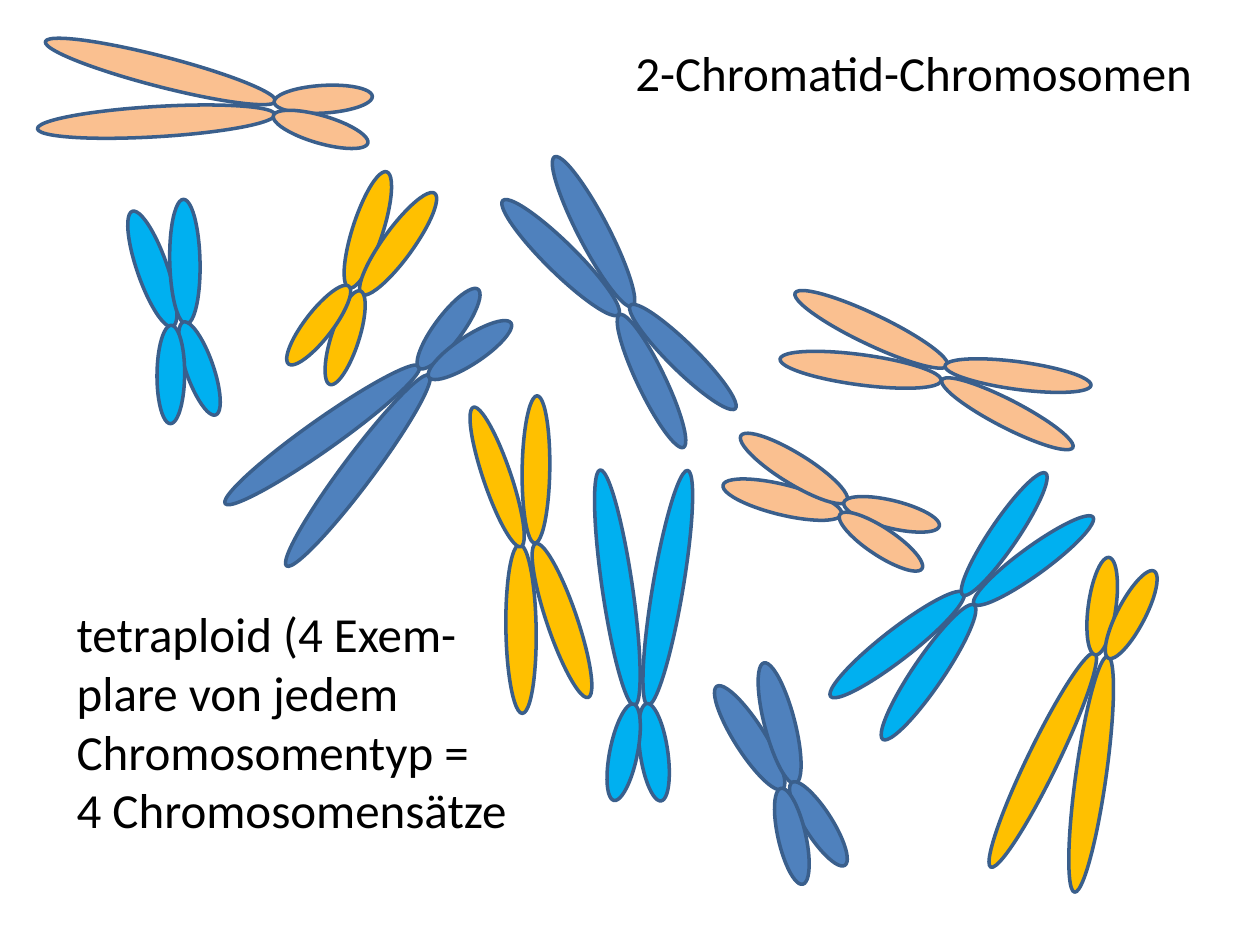
"""Slide with the two-chromatid chromosomes of a tetraploid cell."""
from math import cos, radians, sin

from pptx import Presentation
from pptx.dml.color import RGBColor
from pptx.enum.shapes import MSO_SHAPE
from pptx.enum.text import MSO_AUTO_SIZE, PP_ALIGN
from pptx.util import Pt

BLUE = RGBColor(0x4F, 0x81, 0xBD)
CYAN = RGBColor(0x00, 0xB0, 0xF0)
GOLD = RGBColor(0xFF, 0xC0, 0x00)
PEACH = RGBColor(0xFA, 0xC0, 0x90)
EDGE = RGBColor(0x3A, 0x5F, 0x8C)
BLACK = RGBColor(0, 0, 0)

LONG = [(0, 0, 17.3, 136.1), (28.5, 4.2, 17.3, 136.1),
        (7.1, 96, 15.8, 56.2), (-10, 93.5, 15.8, 56.2)]
MID = [(0, 0, 17.3, 92.9), (23.7, 3, 17.3, 96.5),
       (8.6, 89.6, 15.8, 84.2), (-13.8, 86.5, 15.8, 84.2)]
SHORT = [(0, 0, 17.3, 69.8), (18.9, 2.2, 17.3, 71.3),
         (6.7, 62.6, 15.8, 56.2), (-9.9, 60.4, 15.8, 56.2)]
TURNS = [0, 17.9, 0, 19.7]

CHROMOSOMES = [
    (LONG, BLUE, 204.5, 268.9, 216.8),
    (LONG, CYAN, 352.8, 335.9, 351.7),
    (SHORT, BLUE, 428.4, 421.6, 327.5),
    (SHORT, GOLD, 210.2, 131.4, 18),
    (MID, BLUE, 320.4, 147.2, 314.6),
    (MID, CYAN, 530.6, 384.1, 214.2),
    (SHORT, PEACH, 447.1, 285.5, 283.8),
    (SHORT, CYAN, 87.1, 153.7, 340.8),
    (LONG, PEACH, 89.3, 69.5, 266.6),
    (LONG, GOLD, 623.5, 442.4, 188),
    (MID, GOLD, 321.1, 354.6, 161.2),
    (MID, PEACH, 491.8, 211.3, 277.6),
]

deck = Presentation()
deck.slide_width, deck.slide_height = Pt(720), Pt(540)
slide = deck.slides.add_slide(deck.slide_layouts[6])


def add_text(text, left, top, width, height, size=28, font="Calibri",
             color=BLACK, align=PP_ALIGN.LEFT):
    box = slide.shapes.add_textbox(Pt(left), Pt(top), Pt(width), Pt(height))
    frame = box.text_frame
    frame.word_wrap = True
    frame.auto_size = MSO_AUTO_SIZE.SHAPE_TO_FIT_TEXT
    frame.text = text
    for para in frame.paragraphs:
        para.alignment = align
        para.font.size = Pt(size)
        para.font.name = font
        para.font.color.rgb = color


for arms, color, x, y, angle in CHROMOSOMES:
    group = slide.shapes.add_group_shape()
    c, s = cos(radians(angle)), sin(radians(angle))
    for (dx, dy, width, height), turn in zip(arms, TURNS):
        left = x + dx * c - dy * s - width / 2
        top = y + dx * s + dy * c - height / 2
        arm = group.shapes.add_shape(
            MSO_SHAPE.OVAL, Pt(left), Pt(top), Pt(width), Pt(height))
        arm.rotation = (angle + turn) % 360
        arm.shadow.inherit = False
        arm.fill.solid()
        arm.fill.fore_color.rgb = color
        arm.line.color.rgb = EDGE
        arm.line.width = Pt(2)

add_text("2-Chromatid-Chromosomen", left=355, top=20.9, width=334, height=41,
         align=PP_ALIGN.CENTER)
add_text("tetraploid (4 Exem-plare von jedem Chromosomentyp =\n"
         "4 Chromosomensätze", left=36.7, top=341.3, width=267.8, height=143.3)

deck.save("out.pptx")
